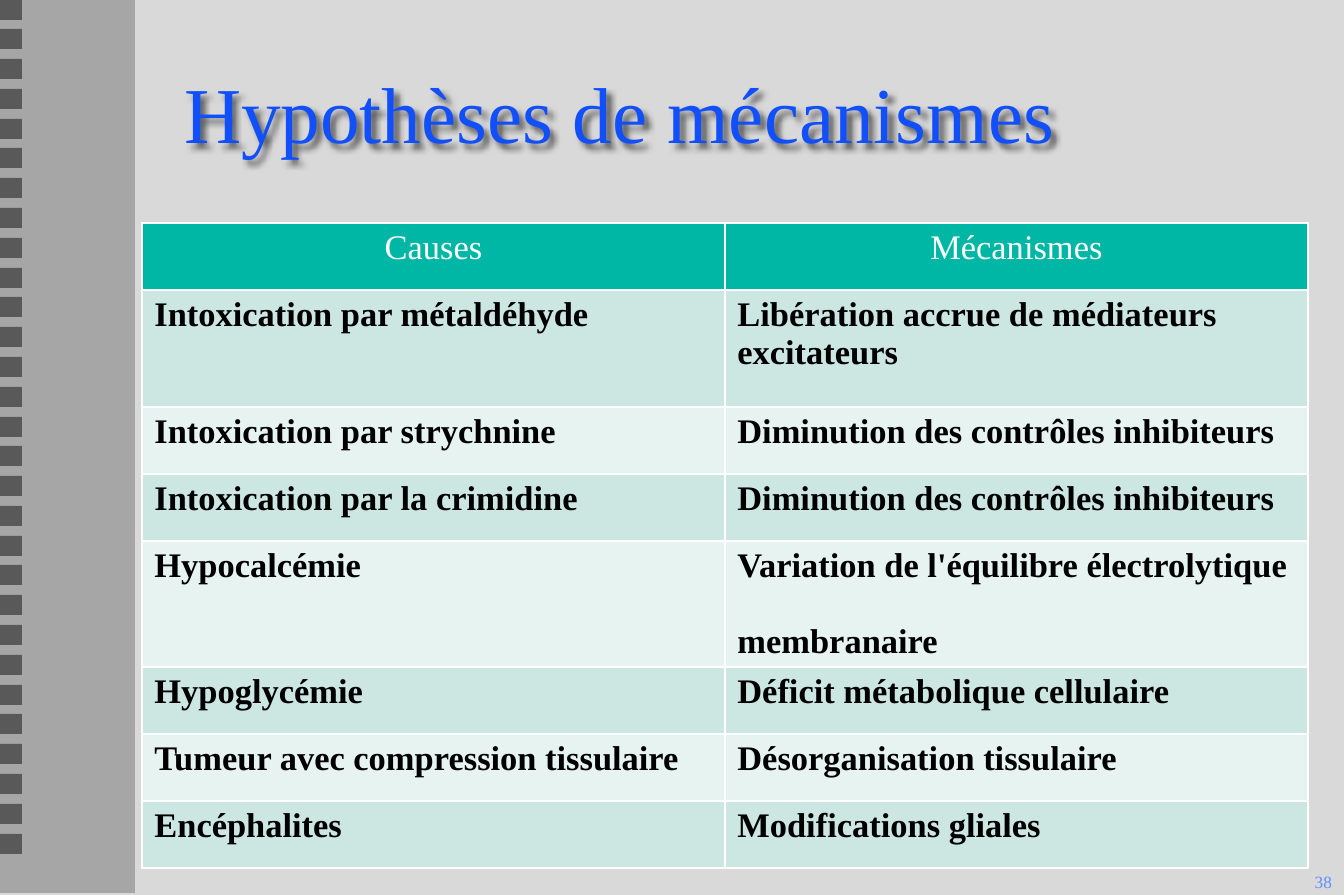
from dataclasses import dataclass

from lxml.etree import SubElement
from pptx import Presentation
from pptx.dml.color import RGBColor
from pptx.enum.shapes import MSO_SHAPE
from pptx.enum.text import MSO_ANCHOR, PP_ALIGN
from pptx.oxml.ns import qn
from pptx.slide import Slide
from pptx.table import _Cell
from pptx.text.text import TextFrame
from pptx.util import Emu, Pt

RECT = MSO_SHAPE.RECTANGLE
TOP, MIDDLE = MSO_ANCHOR.TOP, MSO_ANCHOR.MIDDLE
LEFT, CENTER, RIGHT = PP_ALIGN.LEFT, PP_ALIGN.CENTER, PP_ALIGN.RIGHT
FONT = "Times New Roman"
BACK = RGBColor(0xD9, 0xD9, 0xD9)
BAND = RGBColor(0xA6, 0xA6, 0xA6)
HOLE = RGBColor(0x59, 0x59, 0x59)
BLUE = RGBColor(0x11, 0x4F, 0xFB)
PALE = RGBColor(0x61, 0x8F, 0xFD)
TEAL = RGBColor(0x00, 0xB7, 0xA5)
MINT = RGBColor(0xCC, 0xE6, 0xE1)
ICE = RGBColor(0xE7, 0xF3, 0xF0)
WHITE = RGBColor(0xFF, 0xFF, 0xFF)
BLACK = RGBColor(0x00, 0x00, 0x00)
SCALE = 7380
HOLES = 29
LAST_TOP = 834


@dataclass
class Box:
    x: int
    y: int
    w: int
    h: int

    def place(self) -> tuple[Emu, Emu, Emu, Emu]:
        return px(self.x), px(self.y), px(self.w), px(self.h)


@dataclass
class Row:
    cause: str
    effect: str
    h: int = 67


ROWS = [
    Row("Intoxication par métaldéhyde", "Libération accrue de médiateurs\vexcitateurs", 117),
    Row("Intoxication par strychnine", "Diminution des contrôles inhibiteurs"),
    Row("Intoxication par la crimidine", "Diminution des contrôles inhibiteurs"),
    Row("Hypocalcémie", "Variation de l'équilibre électrolytique\nmembranaire", 126),
    Row("Hypoglycémie", "Déficit métabolique cellulaire"),
    Row("Tumeur avec compression tissulaire", "Désorganisation tissulaire"),
    Row("Encéphalites", "Modifications gliales"),
]
HEAD = Row("Causes", "Mécanismes")


def px(n: int) -> Emu:
    return Emu(n * SCALE)


def write(frame: TextFrame, text: str, *, size: int = 20, color: RGBColor = BLACK,
          bold: bool = False, align: PP_ALIGN = LEFT, pitch: int | None = None) -> None:
    frame.word_wrap = True
    for i, line in enumerate(text.split("\n")):
        para = frame.add_paragraph() if i else frame.paragraphs[0]
        para.text = line
        para.alignment = align
        if pitch:
            para.line_spacing = Pt(pitch)
            para.space_before = Pt(pitch if i else 0)
        for run in para.runs:
            font = run.font
            font.name, font.size, font.bold = FONT, Pt(size), bold
            font.color.rgb = color


def draw_rect(slide: Slide, box: Box, color: RGBColor) -> None:
    shape = slide.shapes.add_shape(RECT, *box.place())
    shape.shadow.inherit = False
    shape.fill.solid()
    shape.fill.fore_color.rgb = color
    shape.line.fill.background()


def draw_title(slide: Slide) -> None:
    title = slide.shapes.add_textbox(*Box(172, 37, 1161, 149).place())
    title.text_frame.vertical_anchor = MIDDLE
    write(title.text_frame, "Hypothèses de mécanismes", size=46, color=BLUE)
    effects = SubElement(title.element.spPr, qn("a:effectLst"))
    shadow = SubElement(effects, qn("a:outerShdw"), blurRad="38100",
                        dist="50800", dir="2700000", algn="tl", rotWithShape="0")
    shade = SubElement(shadow, qn("a:srgbClr"), val=str(BLACK))
    SubElement(shade, qn("a:alpha"), val="60000")


def style_cell(cell: _Cell, color: RGBColor) -> None:
    cell.fill.solid()
    cell.fill.fore_color.rgb = color
    cell.vertical_anchor = TOP
    props = cell._tc.get_or_add_tcPr()
    for i, side in enumerate(("lnL", "lnR", "lnT", "lnB")):
        line = SubElement(props, qn(f"a:{side}"), w=str(Pt(1)))
        fill = SubElement(line, qn("a:solidFill"))
        SubElement(fill, qn("a:srgbClr"), val=str(WHITE))
        props.insert(i, line)


def draw_table(slide: Slide) -> None:
    rows = [HEAD, *ROWS]
    box = Box(142, 223, 1166, sum(row.h for row in rows))
    table = slide.shapes.add_table(len(rows), 2, *box.place()).table
    table.horz_banding = False
    for col in table.columns:
        col.width = px(box.w // 2)
    for i, row in enumerate(rows):
        table.rows[i].height = px(row.h)
        cause, effect = table.cell(i, 0), table.cell(i, 1)
        color = TEAL if i == 0 else MINT if i % 2 else ICE
        for cell in (cause, effect):
            style_cell(cell, color)
        if i == 0:
            write(cause.text_frame, row.cause, color=WHITE, align=CENTER)
            write(effect.text_frame, row.effect, color=WHITE, align=CENTER)
        else:
            write(cause.text_frame, row.cause, bold=True)
            write(effect.text_frame, row.effect, bold=True, pitch=22)


def main() -> None:
    deck = Presentation()
    deck.slide_width, deck.slide_height = px(1344), px(895)
    slide = deck.slides.add_slide(deck.slide_layouts[6])
    slide.background.fill.solid()
    slide.background.fill.fore_color.rgb = BACK
    draw_rect(slide, Box(0, 0, 135, 893), BAND)
    for i in range(HOLES):
        draw_rect(slide, Box(0, i * LAST_TOP // (HOLES - 1), 22, 20), HOLE)
    page = slide.shapes.add_textbox(*Box(1277, 865, 67, 30).place())
    write(page.text_frame, "38", size=10, color=PALE, align=RIGHT)
    draw_title(slide)
    draw_table(slide)
    deck.save("out.pptx")


if __name__ == "__main__":
    main()
